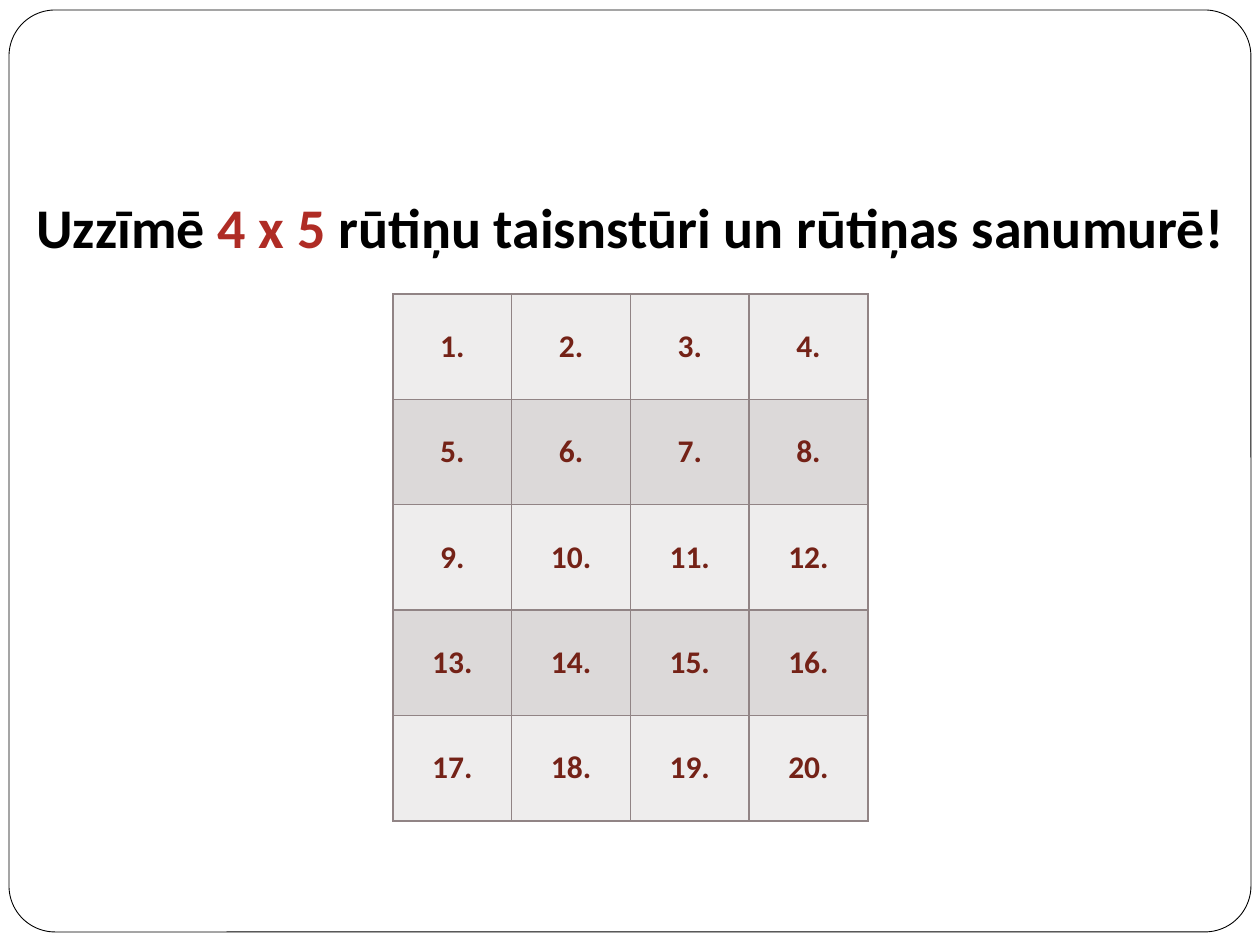
import lxml.etree
import pptx
import pptx.dml.color
import pptx.enum.shapes
import pptx.enum.text
import pptx.oxml.ns
import pptx.util

COLORS = {
    "white": "FFFFFF",
    "black": "000000",
    "accent": "AF2C25",
    "number": "742217",
    "light_row": "EEEDED",
    "dark_row": "DCD9D9",
    "grid": "918485",
}
FONT = "Calibri"
ROWS, COLUMNS = 5, 4
PIXELS_PER_INCH = 126


def px(length):
    return pptx.util.Emu(round(length * 914400 / PIXELS_PER_INCH))


def rgb(name):
    return pptx.dml.color.RGBColor.from_string(COLORS[name])


def add_run(paragraph, text, size, color):
    run = paragraph.add_run()
    run.text = text
    run.font.name = FONT
    run.font.size = pptx.util.Pt(size)
    run.font.bold = True
    run.font.color.rgb = rgb(color)


def add_frame(slide):
    shape = slide.shapes.add_shape(
        pptx.enum.shapes.MSO_SHAPE.ROUNDED_RECTANGLE, px(9), px(10), px(1242), px(922))
    shape.adjustments[0] = 0.05
    shape.shadow.inherit = False
    shape.fill.solid()
    shape.fill.fore_color.rgb = rgb("white")
    shape.line.color.rgb = rgb("black")
    shape.line.width = pptx.util.Pt(0.5)


def add_title(slide, runs):
    shape = slide.shapes.add_textbox(px(20), px(145), px(1221), px(127))
    shape.fill.solid()
    shape.fill.fore_color.rgb = rgb("white")
    frame = shape.text_frame
    frame.word_wrap = True
    frame.vertical_anchor = pptx.enum.text.MSO_ANCHOR.BOTTOM
    frame.margin_bottom = px(12)
    paragraph = frame.paragraphs[0]
    paragraph.alignment = pptx.enum.text.PP_ALIGN.CENTER
    for text, color in runs:
        add_run(paragraph, text, 32, color)


def add_borders(cell, color, points):
    """Draw all four sides; the lines must precede the fill in the cell XML."""
    qn = pptx.oxml.ns.qn
    properties = cell._tc.get_or_add_tcPr()
    for index, side in enumerate(("lnL", "lnR", "lnT", "lnB")):
        line = lxml.etree.Element(qn(f"a:{side}"), w=str(pptx.util.Pt(points)))
        fill = lxml.etree.SubElement(line, qn("a:solidFill"))
        lxml.etree.SubElement(fill, qn("a:srgbClr"), val=COLORS[color])
        properties.insert(index, line)


def add_number_grid(slide):
    table = slide.shapes.add_table(
        ROWS, COLUMNS, px(393), px(294), px(475), px(527)).table
    table.first_row = False
    table.horz_banding = False
    for index, cell in enumerate(table.iter_cells()):
        row = index // COLUMNS
        cell.fill.solid()
        cell.fill.fore_color.rgb = rgb("dark_row" if row % 2 else "light_row")
        add_borders(cell, "grid", 1)
        cell.vertical_anchor = pptx.enum.text.MSO_ANCHOR.MIDDLE
        paragraph = cell.text_frame.paragraphs[0]
        paragraph.alignment = pptx.enum.text.PP_ALIGN.CENTER
        add_run(paragraph, f"{index + 1}.", 18, "number")


def main():
    presentation = pptx.Presentation()
    presentation.slide_width = px(1260)
    presentation.slide_height = px(945)
    slide = presentation.slides.add_slide(presentation.slide_layouts[6])
    add_frame(slide)
    add_title(slide, [
        ("Uzzīmē", "black"),
        (" 4 x 5 ", "accent"),
        ("rūtiņu taisnstūri un rūtiņas sanumurē!", "black"),
    ])
    add_number_grid(slide)
    presentation.save("out.pptx")


if __name__ == "__main__":
    main()
